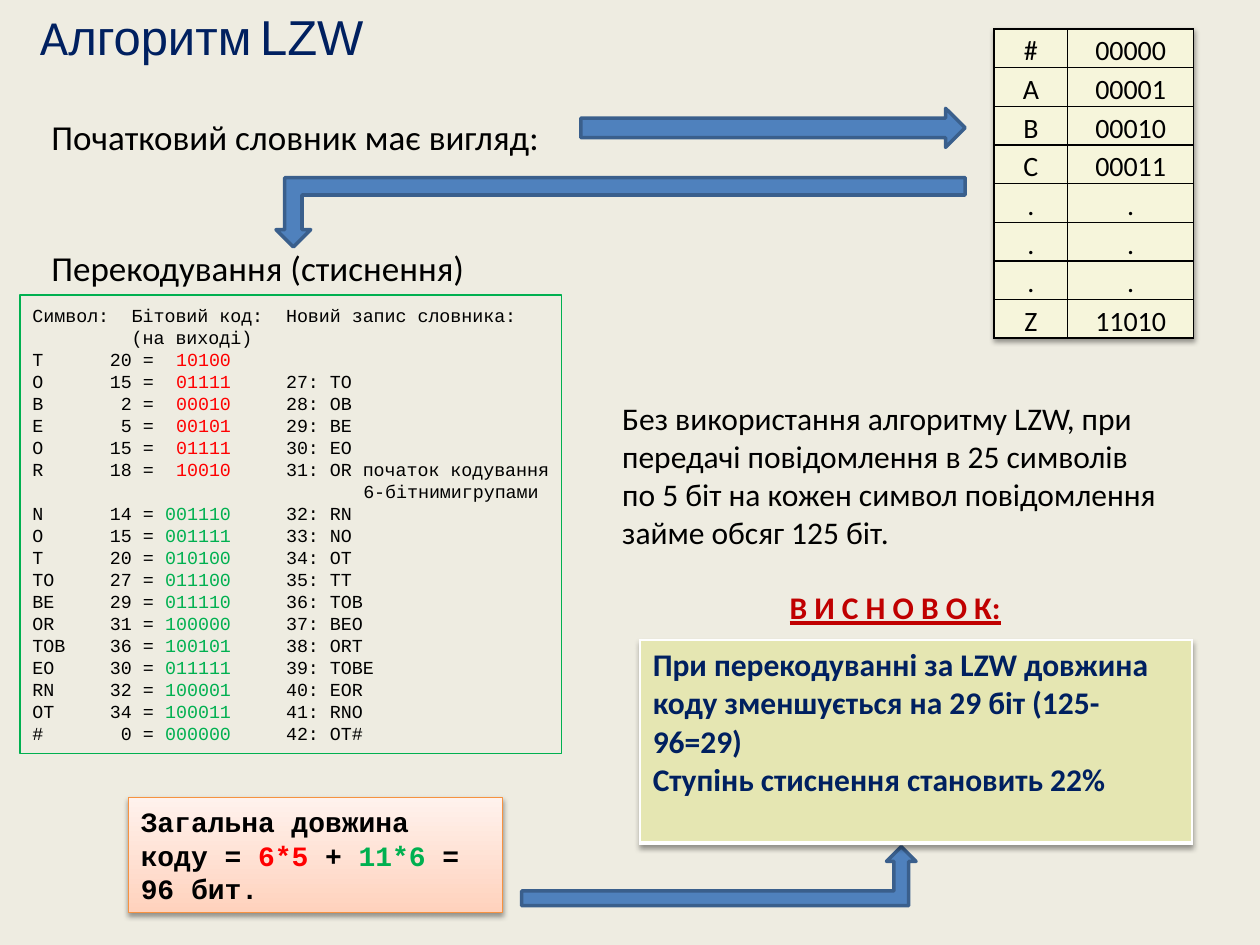
from dataclasses import dataclass
from typing import NamedTuple

from lxml import etree
from pptx import Presentation
from pptx.dml.color import RGBColor
from pptx.enum.shapes import MSO_SHAPE
from pptx.enum.text import MSO_ANCHOR, PP_ALIGN
from pptx.oxml.ns import qn
from pptx.util import Pt

RECTANGLE = MSO_SHAPE.RECTANGLE
RIGHT_ARROW = MSO_SHAPE.RIGHT_ARROW
BENT_ARROW = MSO_SHAPE.BENT_UP_ARROW
TOP, MIDDLE = MSO_ANCHOR.TOP, MSO_ANCHOR.MIDDLE
LEFT, CENTER = PP_ALIGN.LEFT, PP_ALIGN.CENTER
TITLE_ONLY = 5


@dataclass(frozen=True)
class Theme:
    page: str = "EEECE1"
    ink: str = "000000"
    navy: str = "002060"
    red: str = "FF0000"
    dark_red: str = "C00000"
    green: str = "00B050"
    white: str = "FFFFFF"
    arrow: str = "4F81BD"
    arrow_edge: str = "3A5F8C"
    dictionary: str = "F6F5DB"
    conclusion: str = "E5E6B2"
    total_low: str = "FFD2BD"
    total_high: str = "FFF2ED"
    total_edge: str = "F69240"
    sans: str = "Calibri"
    heading: str = "Arial"
    mono: str = "Courier New"
    title_size: float = 28
    step_size: float = 20
    body_size: float = 18
    cell_size: float = 16
    code_size: float = 10.5


THEME = Theme()


class Box(NamedTuple):
    left: float
    top: float
    width: float
    height: float

    def lengths(self) -> list:
        return [Pt(value) for value in self]


class Span(NamedTuple):
    text: str
    color: str = THEME.ink


class Arrow(NamedTuple):
    kind: int
    box: Box
    rotation: float = 0


class CodeRow(NamedTuple):
    symbol: str
    number: int
    bits: str
    entry: str = ""


SANS = {"name": THEME.sans, "size": Pt(THEME.body_size)}
STEP = SANS | {"size": Pt(THEME.step_size)}
CELL = SANS | {"size": Pt(THEME.cell_size)}
CODE = {"name": THEME.mono, "size": Pt(THEME.code_size)}
TOTAL = {"name": THEME.mono, "size": Pt(THEME.cell_size), "bold": True}
TITLE = {"name": THEME.heading, "size": Pt(THEME.title_size)}
STRONG = SANS | {"bold": True}

DICTIONARY = [("#", "00000"), ("A", "00001"), ("B", "00010"), ("C", "00011"),
              *[(".", ".")] * 3, ("Z", "11010")]
ARROWS = [
    Arrow(RIGHT_ARROW, Box(331.9, 61.9, 219.6, 22.3)),
    Arrow(BENT_ARROW, Box(157.7, 101.5, 393.8, 39.6), 180),
    Arrow(BENT_ARROW, Box(298.1, 483.8, 225.4, 33.8)),
]
SHORT_CODES = [
    CodeRow("T", 20, "10100"),
    CodeRow("O", 15, "01111", "27: TO"),
    CodeRow("B", 2, "00010", "28: OB"),
    CodeRow("E", 5, "00101", "29: BE"),
    CodeRow("O", 15, "01111", "30: EO"),
    CodeRow("R", 18, "10010", "31: OR початок кодування"),
]
LONG_CODES = [
    CodeRow("N", 14, "001110", "32: RN"),
    CodeRow("O", 15, "001111", "33: NO"),
    CodeRow("T", 20, "010100", "34: OT"),
    CodeRow("TO", 27, "011100", "35: TT"),
    CodeRow("BE", 29, "011110", "36: TOB"),
    CodeRow("OR", 31, "100000", "37: BEO"),
    CodeRow("TOB", 36, "100101", "38: ORT"),
    CodeRow("EO", 30, "011111", "39: TOBE"),
    CodeRow("RN", 32, "100001", "40: EOR"),
    CodeRow("OT", 34, "100011", "41: RNO"),
    CodeRow("#", 0, "000000", "42: OT#"),
]
CHARACTER = 0.6 * THEME.code_size
HEADER_TABS = [(9, "l"), (23, "l")]
CODE_TABS = [(11, "r"), (18, "r"), (23, "l")]
NOTE_TABS = [(30, "l")]


def rgb(color: str) -> RGBColor:
    return RGBColor.from_string(color)


def apply(target, values: dict) -> None:
    for name, value in values.items():
        setattr(target, name, value)


def write(para, spans: list, font: dict, **layout) -> None:
    apply(para, {"alignment": LEFT} | layout)
    for item in spans:
        span = para.add_run()
        span.text = item.text
        apply(span.font, font)
        span.font.color.rgb = rgb(item.color)


def set_tabs(para, stops: list) -> None:
    tabs = etree.SubElement(para._p.get_or_add_pPr(), qn("a:tabLst"))
    for column, side in stops:
        etree.SubElement(tabs, qn("a:tab"), pos=str(Pt(column * CHARACTER)), algn=side)


def cast_shadow(effects) -> None:
    shadow = etree.SubElement(effects, qn("a:outerShdw"), blurRad=str(Pt(3.1)),
                              dist=str(Pt(1.6)), dir="5400000", rotWithShape="0")
    color = etree.SubElement(shadow, qn("a:srgbClr"), val=THEME.ink)
    etree.SubElement(color, qn("a:alpha"), val="38000")


def add_text(slide, box: Box, **layout):
    frame = slide.shapes.add_textbox(*box.lengths()).text_frame
    apply(frame, {"word_wrap": True} | layout)
    return frame


def add_panel(slide, kind: int, box: Box, edge: str, width: float):
    panel = slide.shapes.add_shape(kind, *box.lengths())
    panel.shadow.inherit = False
    panel.line.color.rgb = rgb(edge)
    panel.line.width = Pt(width)
    apply(panel.text_frame, {"word_wrap": True, "vertical_anchor": MIDDLE})
    return panel


def add_arrow(slide, arrow: Arrow) -> None:
    shape = add_panel(slide, arrow.kind, arrow.box, THEME.arrow_edge, 2)
    shape.fill.solid()
    shape.fill.fore_color.rgb = rgb(THEME.arrow)
    shape.rotation = arrow.rotation


def add_grid(slide, box: Box, rows: int, widths: list):
    table = slide.shapes.add_table(rows, len(widths), *box.lengths()).table
    apply(table, {"first_row": False, "horz_banding": False})
    for column, width in zip(table.columns, widths):
        column.width = Pt(width)
    for row in table.rows:
        row.height = Pt(box.height / rows)
    effects = etree.Element(qn("a:effectLst"))
    table._tbl.tblPr.insert(0, effects)
    cast_shadow(effects)
    return table


def dress_cell(cell, fill: str, edge: str, bottom: float = 1, **layout) -> None:
    apply(cell, layout)
    cell.fill.solid()
    cell.fill.fore_color.rgb = rgb(fill)
    properties = cell._tc.get_or_add_tcPr()
    for index, (side, width) in enumerate({"L": 1, "R": 1, "T": 1, "B": bottom}.items()):
        line = etree.Element(qn(f"a:ln{side}"), w=str(Pt(width)))
        paint = etree.SubElement(line, qn("a:solidFill"))
        etree.SubElement(paint, qn("a:srgbClr"), val=edge)
        properties.insert(index, line)


def add_title(slide) -> None:
    title = slide.shapes.title
    apply(title, dict(zip(("left", "top", "width", "height"), Box(-28, 0, 286.5, 41).lengths())))
    para = title.text_frame.paragraphs[0]
    write(para, [Span("А", THEME.navy)], TITLE | {"name": THEME.sans})
    write(para, [Span("лгоритм", THEME.navy)], TITLE)
    write(para, [Span(" ", THEME.navy)], TITLE | {"size": Pt(THEME.body_size)})
    write(para, [Span("LZW", THEME.navy)], TITLE, alignment=CENTER)


def add_listing(slide) -> None:
    panel = add_panel(slide, RECTANGLE, Box(11.5, 168.5, 309.6, 262), THEME.green, 0.75)
    panel.fill.background()
    frame = panel.text_frame
    apply(frame, dict(margin_right=Pt(2), margin_top=Pt(3.6), margin_bottom=Pt(3.6)))
    lines = [([Span("Символ:\tБітовий код:\tНовий запис словника:")], HEADER_TABS),
             ([Span("\t(на виході)")], HEADER_TABS)]
    for rows, color in ((SHORT_CODES, THEME.red), (LONG_CODES, THEME.green)):
        if rows is LONG_CODES:
            lines.append(([Span("\t6-бітнимигрупами")], NOTE_TABS))
        for row in rows:
            spans = [Span(f"{row.symbol}\t{row.number} =\t"), Span(row.bits, color)]
            if row.entry:
                spans.append(Span(f"\t{row.entry}"))
            lines.append((spans, CODE_TABS))
    for index, (spans, stops) in enumerate(lines):
        para = frame.add_paragraph() if index else frame.paragraphs[0]
        write(para, spans, CODE, line_spacing=Pt(12.57))
        set_tabs(para, stops)


def add_total(slide) -> None:
    panel = add_panel(slide, RECTANGLE, Box(73.4, 455.8, 213.8, 65.5), THEME.total_edge, 0.75)
    panel.fill.gradient()
    panel.fill.gradient_angle = 90
    for stop, color in zip(panel.fill.gradient_stops, (THEME.total_low, THEME.total_high)):
        stop.color.rgb = rgb(color)
    cast_shadow(panel._element.spPr.find(qn("a:effectLst")))
    write(panel.text_frame.paragraphs[0],
          [Span("Загальна довжина коду = "), Span("6*5", THEME.red), Span(" + "),
           Span("11*6", THEME.green), Span(" = 96 бит.")], TOTAL)


def main() -> None:
    deck = Presentation()
    deck.slide_width, deck.slide_height = Pt(720), Pt(540)
    slide = deck.slides.add_slide(deck.slide_layouts[TITLE_ONLY])
    slide.background.fill.solid()
    slide.background.fill.fore_color.rgb = rgb(THEME.page)
    add_title(slide)

    steps = add_text(slide, Box(22.3, 50.4, 600.5, 185.8), margin_top=Pt(15.6))
    write(steps.paragraphs[0], [Span("Початковий словник має вигляд:")], STEP)
    write(steps.add_paragraph(), [Span("Перекодування (стиснення)")], STEP, space_before=Pt(51))

    dictionary = add_grid(slide, Box(568.1, 16.6, 114, 176.8), len(DICTIONARY), [42, 72])
    for row, texts in zip(dictionary.rows, DICTIONARY):
        for cell, text in zip(row.cells, texts):
            dress_cell(cell, THEME.dictionary, THEME.ink, vertical_anchor=MIDDLE,
                       margin_left=Pt(5), margin_right=Pt(5), margin_top=0, margin_bottom=0)
            write(cell.text_frame.paragraphs[0], [Span(text)], CELL,
                  alignment=CENTER, line_spacing=1.15)

    add_listing(slide)
    for arrow in ARROWS:
        add_arrow(slide, arrow)

    remark = add_text(slide, Box(348.5, 224.6, 326.2, 181.4), vertical_anchor=TOP)
    write(remark.paragraphs[0],
          [Span("Без використання алгоритму LZW, при передачі повідомлення в 25 символів "
                "по 5 біт на кожен символ повідомлення займе обсяг 125 біт.")], SANS)
    write(remark.add_paragraph(), [Span("В И С Н О В О К:", THEME.dark_red)],
          STRONG | {"underline": True}, alignment=CENTER, space_before=Pt(21.6))
    add_total(slide)

    cell = add_grid(slide, Box(365.8, 365.8, 315.4, 116), 1, [315.4]).cell(0, 0)
    dress_cell(cell, THEME.conclusion, THEME.white, bottom=3)
    write(cell.text_frame.paragraphs[0],
          [Span("При перекодуванні за LZW довжина коду зменшується на 29 біт (125-96=29)",
                THEME.navy)], STRONG)
    write(cell.text_frame.add_paragraph(),
          [Span("Ступінь стиснення становить 22%", THEME.navy)], STRONG)
    deck.save("out.pptx")


if __name__ == "__main__":
    main()
